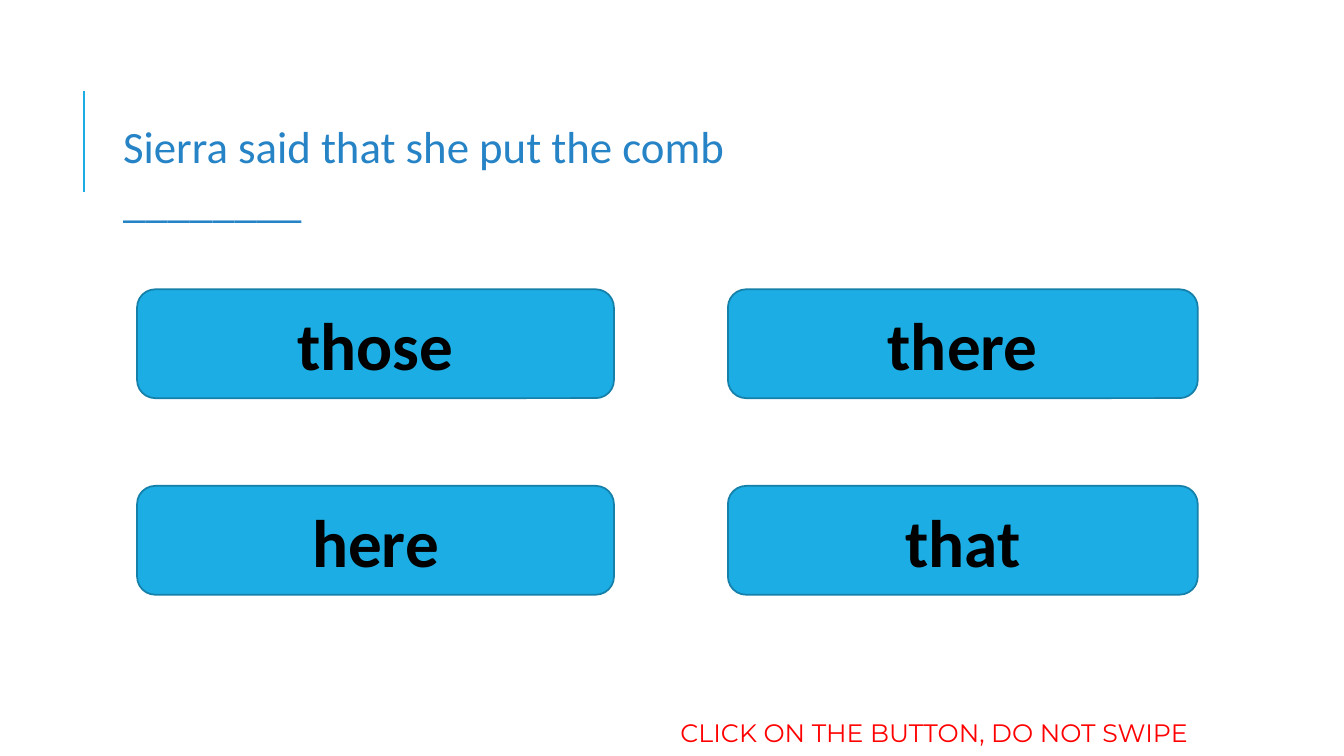
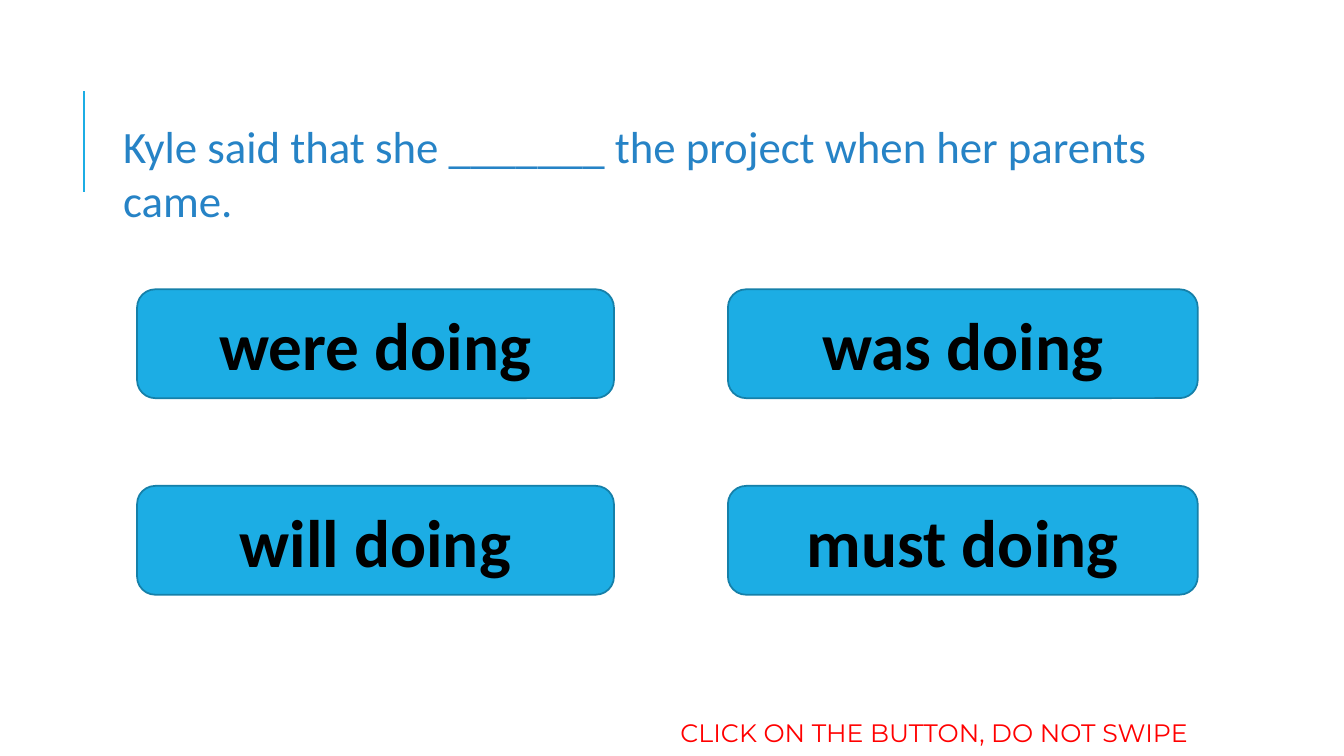
from dataclasses import dataclass
from itertools import product

from lxml.etree import SubElement
from pptx import Presentation
from pptx.dml.color import RGBColor
from pptx.enum.shapes import MSO_CONNECTOR, MSO_SHAPE
from pptx.enum.text import MSO_ANCHOR, MSO_AUTO_SIZE, PP_ALIGN
from pptx.oxml.ns import qn
from pptx.slide import Slide
from pptx.text.text import TextFrame
from pptx.util import Inches, Pt


@dataclass(frozen=True)
class Theme:
    accent: RGBColor = RGBColor(0x1C, 0xAD, 0xE4)
    outline: RGBColor = RGBColor(0x15, 0x80, 0xA9)
    title: RGBColor = RGBColor(0x26, 0x83, 0xC6)
    answer: RGBColor = RGBColor(0, 0, 0)
    notice: RGBColor = RGBColor(0xFF, 0, 0)
    main_font: str = "Calibri"
    notice_font: str = "Montserrat"
    title_size: int = 32
    answer_size: int = 48
    notice_size: int = 18


@dataclass(frozen=True)
class Question:
    prompt: str
    prompt_width: float
    answers: tuple[str, str, str, str]


@dataclass(frozen=True)
class Column:
    left: float
    width: float


THEME = Theme()
COLUMNS = (Column(1.36, 4.73), Column(7.22, 4.66))
ROW_TOPS = (2.87, 4.82)
BUTTON_HEIGHT = 1.08
NOTICE = "CLICK ON THE BUTTON, DO NOT SWIPE"

QUESTIONS = (
    Question("Sierra said that she put the comb ________", 8,
             ("those", "there", "here", "that")),
    Question("Kyle said that she _______ the project when her parents came.", 11.33,
             ("were doing", "was doing", "will doing", "must doing")),
)


def write_text(frame: TextFrame, text: str, *, size: int, color: RGBColor,
               font: str = THEME.main_font, bold: bool = False, wrap: bool = True,
               align: PP_ALIGN = PP_ALIGN.LEFT,
               anchor: MSO_ANCHOR = MSO_ANCHOR.TOP) -> None:
    frame.word_wrap = wrap
    frame.auto_size = MSO_AUTO_SIZE.NONE
    frame.vertical_anchor = anchor
    para = frame.paragraphs[0]
    para.alignment = align
    span = para.add_run()
    span.text = text
    span.font.name = font
    span.font.size = Pt(size)
    span.font.bold = bold
    span.font.color.rgb = color


def add_accent_line(page: Slide) -> None:
    line = page.shapes.add_connector(
        MSO_CONNECTOR.STRAIGHT, Inches(0.83), Inches(1.9), Inches(0.83), Inches(0.9))
    line.line.color.rgb = THEME.accent
    line.line.width = Pt(1.5)
    SubElement(line._element.spPr, qn("a:effectLst"))


def add_prompt(page: Slide, question: Question) -> None:
    title = page.shapes.title
    title.left, title.top = Inches(1.12), Inches(1.13)
    title.width, title.height = Inches(question.prompt_width), Inches(0.64)
    write_text(title.text_frame, question.prompt,
               size=THEME.title_size, color=THEME.title)


def add_button(page: Slide, answer: str, column: Column, top: float) -> None:
    button = page.shapes.add_shape(
        MSO_SHAPE.ROUNDED_RECTANGLE, Inches(column.left), Inches(top),
        Inches(column.width), Inches(BUTTON_HEIGHT))
    button.shadow.inherit = False
    button.fill.solid()
    button.fill.fore_color.rgb = THEME.accent
    button.line.color.rgb = THEME.outline
    button.line.width = Pt(1.25)
    write_text(button.text_frame, answer, size=THEME.answer_size, color=THEME.answer,
               bold=True, align=PP_ALIGN.CENTER, anchor=MSO_ANCHOR.MIDDLE)


def add_notice(page: Slide) -> None:
    box = page.shapes.add_textbox(
        Inches(6.65), Inches(7.07), Inches(5.73), Inches(0.4))
    write_text(box.text_frame, NOTICE, size=THEME.notice_size, color=THEME.notice,
               font=THEME.notice_font)


def main() -> None:
    deck = Presentation()
    deck.slide_width, deck.slide_height = Inches(13.33), Inches(7.5)
    title_only = deck.slide_layouts.get_by_name("Title Only")
    for question in QUESTIONS:
        page = deck.slides.add_slide(title_only)
        add_accent_line(page)
        add_prompt(page, question)
        for answer, (top, column) in zip(question.answers, product(ROW_TOPS, COLUMNS)):
            add_button(page, answer, column, top)
        add_notice(page)
    deck.save("out.pptx")


if __name__ == "__main__":
    main()
